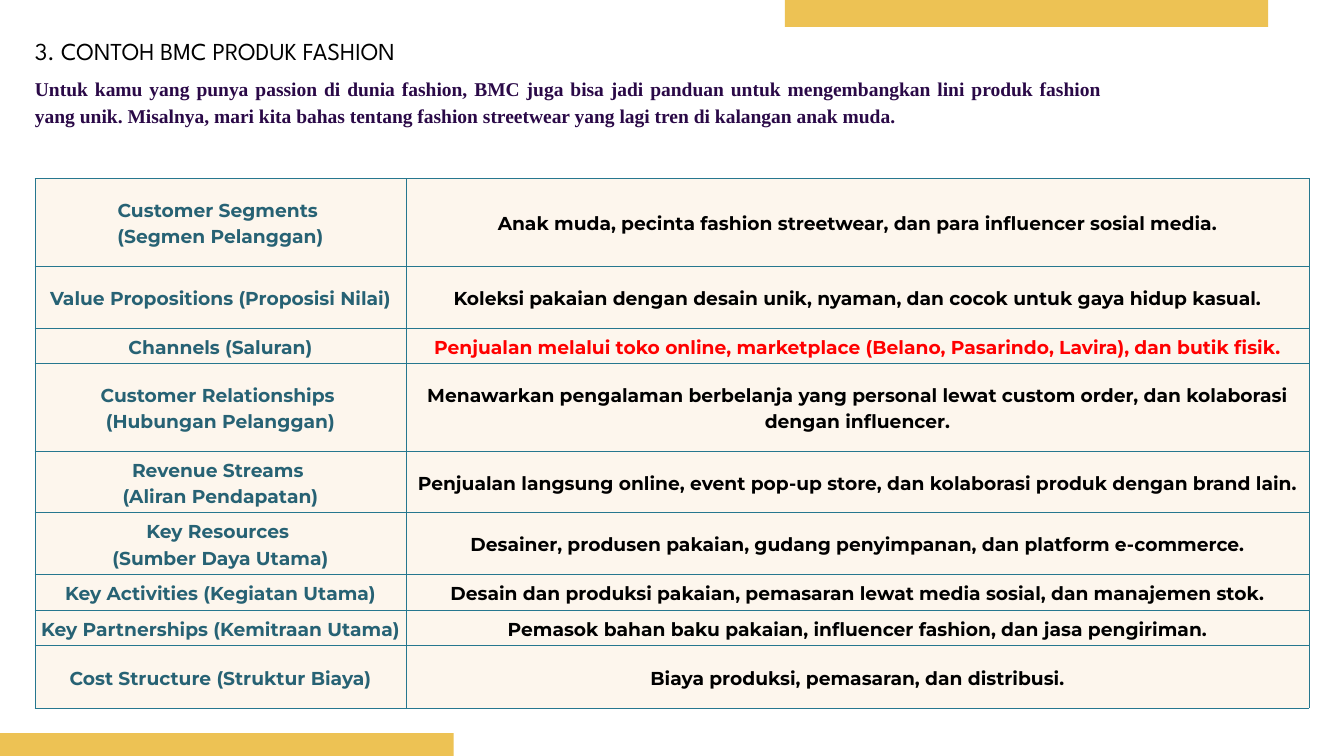
from typing import NamedTuple

from lxml.etree import SubElement as Sub
from pptx import Presentation
from pptx.dml.color import RGBColor as Rgb
from pptx.enum.shapes import MSO_SHAPE as Shape
from pptx.enum.text import MSO_ANCHOR as Anchor, MSO_AUTO_SIZE as Fit, PP_ALIGN as Align
from pptx.oxml.ns import qn
from pptx.util import Inches, Pt

HUES = {
    "gold": "EDC254",
    "cream": "FDF6ED",
    "line": "26778F",
    "teal": "276274",
    "black": "000000",
    "red": "FF0000",
    "plum": "2A0947",
}


class Font(NamedTuple):
    name: str
    size: float
    lead: float
    hue: str
    bold: bool = True
    align: Align = Align.CENTER


class Bar(NamedTuple):
    left: float
    top: float


class Note(NamedTuple):
    top: float
    width: float
    height: float
    text: str
    font: Font


class Row(NamedTuple):
    height: float
    label: str
    text: str
    hue: str = "black"


LEFT = 0.52
BODY = Font("Montserrat", 20, 28, "black")
BARS = [Bar(-0.44, 10.91), Bar(11.68, -0.3)]
NOTES = [
    Note(0.47, 7.52, 0.48, "3. CONTOH BMC PRODUK FASHION",
         Font("League Spartan", 26.1, 36.6, "black", False, Align.LEFT)),
    Note(1.08, 15.87, 1.61,
         "Untuk kamu yang punya passion di dunia fashion, BMC juga bisa jadi panduan "
         "untuk mengembangkan lini produk fashion yang unik. Misalnya, mari kita bahas "
         "tentang fashion streetwear yang lagi tren di kalangan anak muda.",
         Font("Times New Roman", 20.9, 29.3, "plum", True, Align.JUSTIFY)),
]
COLS = [5.52, 13.44]
ROWS = [
    Row(1.3, "Customer Segments \n(Segmen Pelanggan)",
        "Anak muda, pecinta fashion streetwear, dan para influencer sosial media."),
    Row(0.92, "Value Propositions (Proposisi Nilai)",
        "Koleksi pakaian dengan desain unik, nyaman, dan cocok untuk gaya hidup kasual."),
    Row(0.53, "Channels (Saluran)",
        "Penjualan melalui toko online, marketplace (Belano, Pasarindo, Lavira), dan butik fisik.",
        "red"),
    Row(1.3, "Customer Relationships \n(Hubungan Pelanggan)",
        "Menawarkan pengalaman berbelanja yang personal lewat custom order, "
        "dan kolaborasi dengan influencer."),
    Row(0.92, "Revenue Streams \n(Aliran Pendapatan)",
        "Penjualan langsung online, event pop-up store, dan kolaborasi produk dengan brand lain."),
    Row(0.92, "Key Resources \n(Sumber Daya Utama)",
        "Desainer, produsen pakaian, gudang penyimpanan, dan platform e-commerce."),
    Row(0.53, "Key Activities (Kegiatan Utama)",
        "Desain dan produksi pakaian, pemasaran lewat media sosial, dan manajemen stok."),
    Row(0.53, "Key Partnerships (Kemitraan Utama)",
        "Pemasok bahan baku pakaian, influencer fashion, dan jasa pengiriman."),
    Row(0.93, "Cost Structure (Struktur Biaya)",
        "Biaya produksi, pemasaran, dan distribusi."),
]


def paint(fill, hue: str) -> None:
    fill.solid()
    fill.fore_color.rgb = Rgb.from_string(HUES[hue])


def write(frame, text: str, font: Font) -> None:
    """Write one paragraph for each line of the text."""
    for i, line in enumerate(text.split("\n")):
        para = frame.add_paragraph() if i else frame.paragraphs[0]
        para.alignment = font.align
        para.line_spacing = Pt(font.lead)
        run = para.add_run()
        run.text = line
        run.font.name = font.name
        run.font.size = Pt(font.size)
        run.font.bold = font.bold
        run.font.color.rgb = Rgb.from_string(HUES[font.hue])


def draw_bar(slide, bar: Bar) -> None:
    box = slide.shapes.add_shape(Shape.RECTANGLE, Inches(bar.left), Inches(bar.top),
                                 Inches(7.19), Inches(0.7))
    box.shadow.inherit = False
    box.line.fill.background()
    paint(box.fill, "gold")


def draw_note(slide, note: Note) -> None:
    box = slide.shapes.add_textbox(Inches(LEFT), Inches(note.top),
                                   Inches(note.width), Inches(note.height))
    frame = box.text_frame
    frame.word_wrap = True
    frame.auto_size = Fit.SHAPE_TO_FIT_TEXT
    frame.margin_left = frame.margin_right = frame.margin_top = frame.margin_bottom = 0
    write(frame, note.text, note.font)


def draw_cell(cell, text: str, hue: str) -> None:
    cell.vertical_anchor = Anchor.MIDDLE
    cell.margin_left = cell.margin_right = Inches(0.04)
    cell.margin_top = cell.margin_bottom = Inches(0.04)
    # Borders come before the fill in the cell properties
    props = cell._tc.get_or_add_tcPr()
    for side in ("lnL", "lnR", "lnT", "lnB"):
        edge = Sub(props, qn(f"a:{side}"), w=str(Pt(0.75)))
        Sub(Sub(edge, qn("a:solidFill")), qn("a:srgbClr"), val=HUES["line"])
    paint(cell.fill, "cream")
    write(cell.text_frame, text, BODY._replace(hue=hue))


def draw_table(slide, rows: list[Row]) -> None:
    high = sum(row.height for row in rows)
    table = slide.shapes.add_table(len(rows), len(COLS), Inches(LEFT), Inches(2.66),
                                   Inches(sum(COLS)), Inches(high)).table
    table.first_row = table.horz_banding = False
    for col, width in zip(table.columns, COLS):
        col.width = Inches(width)
    for i, row in enumerate(rows):
        table.rows[i].height = Inches(row.height)
        draw_cell(table.cell(i, 0), row.label, "teal")
        draw_cell(table.cell(i, 1), row.text, row.hue)


def main() -> None:
    deck = Presentation()
    deck.slide_width, deck.slide_height = Inches(20), Inches(11.25)
    slide = deck.slides.add_slide(deck.slide_layouts[6])

    # Gold bars at the edges
    for bar in BARS:
        draw_bar(slide, bar)
    # Business model table
    draw_table(slide, ROWS)
    # Title and intro
    for note in NOTES:
        draw_note(slide, note)

    deck.save("out.pptx")


if __name__ == "__main__":
    main()
